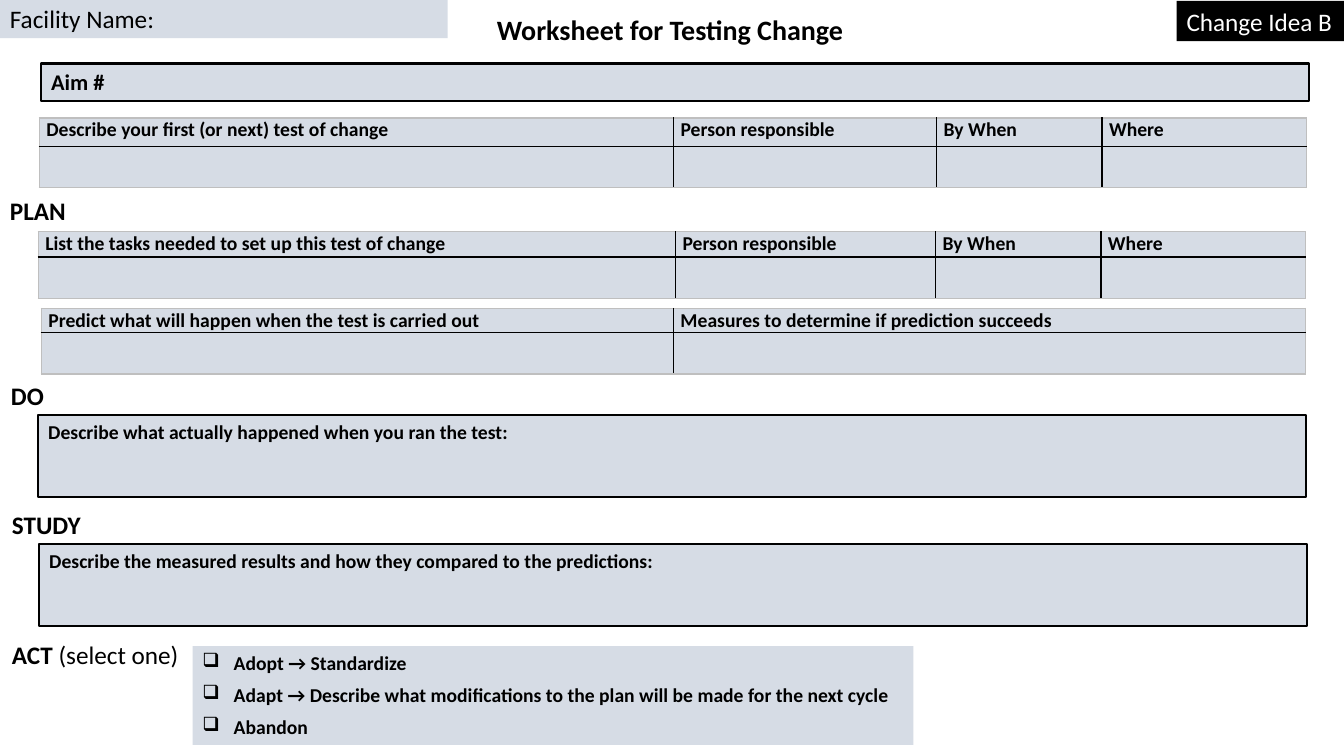
from lxml import etree
from pptx import Presentation
from pptx.dml.color import RGBColor
from pptx.enum.shapes import MSO_SHAPE
from pptx.enum.text import MSO_ANCHOR, MSO_AUTO_SIZE, PP_ALIGN
from pptx.oxml.ns import qn
from pptx.util import Inches, Pt

RECTANGLE = MSO_SHAPE.RECTANGLE
TOP = MSO_ANCHOR.TOP
LEFT = PP_ALIGN.LEFT
FIT_SHAPE = MSO_AUTO_SIZE.SHAPE_TO_FIT_TEXT


class Theme:
    font = "Calibri"
    ink, paper, panel, edge = "000000", "FFFFFF", "D6DCE5", "BFBFBF"
    title, heading, aim, body = 20, 18, 16, 14
    outline, grid = 1.5, 1


# Headings: place, size, wraps, runs of (text, bold)
HEADINGS = [
    ((4.83, 0.08, 3.67, 0.44), Theme.title, False, [("Worksheet for Testing Change", True)]),
    ((0, 1.89, 0.76, 0.4), Theme.heading, False, [("PLAN", True)]),
    ((0.01, 3.72, 0.53, 0.4), Theme.heading, False, [("DO", True)]),
    ((0.02, 5, 0.89, 0.4), Theme.heading, False, [("STUDY", True)]),
    ((0.02, 6.29, 2.08, 0.4), Theme.heading, True, [("ACT ", True), ("(select one)", False)]),
]

# Tags: place, text, fill, text colour, wraps
TAGS = [
    ((0, -0.02, 4.44, 0.4), "Facility Name:", Theme.panel, Theme.ink, True),
    ((11.67, 0.01, 1.66, 0.4), "Change Idea B", Theme.ink, Theme.paper, False),
]

# Answer boxes: place, text, size
ANSWERS = [
    ((0.41, 0.63, 12.57, 0.37), "Aim #", Theme.aim),
    ((0.38, 4.12, 12.57, 0.81),
     "Describe what actually happened when you ran the test:", Theme.body),
    ((0.39, 5.4, 12.57, 0.81),
     "Describe the measured results and how they compared to the predictions:", Theme.body),
]

# Tables: left, top, header height, columns of (heading, width)
ASSIGNMENT = [("Person responsible", 2.61), ("By When", 1.64), ("Where", 2.03)]
TABLES = [
    (0.39, 1.17, 0.28, [("Describe your first (or next) test of change", 6.29)] + ASSIGNMENT),
    (0.38, 2.3, 0.25, [("List the tasks needed to set up this test of change", 6.32),
                       ("Person responsible", 2.58)] + ASSIGNMENT[1:]),
    (0.41, 3.06, 0.24, [("Predict what will happen when the test is carried out", 6.27),
                        ("Measures to determine if prediction succeeds", 6.27)]),
]
ENTRY_HEIGHT = 0.41
CELL_INSET = 0.07

CHOICES_PLACE = (1.91, 6.41, 7.15, 0.98)
CHOICES = [
    "Adopt → Standardize",
    "Adapt → Describe what modifications to the plan will be made for the next cycle",
    "Abandon",
]
CHOICE_INDENT = 0.31


def add_span(para, text, size, color=Theme.ink, bold=True):
    span = para.add_run()
    span.text = text
    span.font.name = Theme.font
    span.font.size = Pt(size)
    span.font.bold = bold
    span.font.color.rgb = RGBColor.from_string(color)


def add_panel(page, place, fill=Theme.panel, outlined=False, wraps=True):
    panel = page.shapes.add_shape(RECTANGLE, *map(Inches, place))
    panel.shadow.inherit = False
    panel.fill.solid()
    panel.fill.fore_color.rgb = RGBColor.from_string(fill)
    if outlined:
        panel.line.color.rgb = RGBColor.from_string(Theme.ink)
        panel.line.width = Pt(Theme.outline)
    else:
        panel.line.fill.background()
    frame = panel.text_frame
    frame.word_wrap = wraps
    frame.auto_size = FIT_SHAPE
    frame.vertical_anchor = TOP
    frame.paragraphs[0].alignment = LEFT
    return frame


def set_borders(cell, colors):
    properties = cell._tc.get_or_add_tcPr()
    for index, (side, color) in enumerate(colors.items()):
        line = etree.Element(qn("a:ln" + side), w=str(Pt(Theme.grid)))
        fill = etree.SubElement(line, qn("a:solidFill"))
        etree.SubElement(fill, qn("a:srgbClr"), val=color)
        properties.insert(index, line)


def add_form_table(page, left, top, header_height, columns):
    heights = (header_height, ENTRY_HEIGHT)
    width = sum(column[1] for column in columns)
    table = page.shapes.add_table(
        len(heights), len(columns),
        *map(Inches, (left, top, width, sum(heights)))).table
    table.first_row = table.horz_banding = False
    for row, height in zip(table.rows, heights):
        row.height = Inches(height)
    last = len(columns) - 1
    for number, (heading, column_width) in enumerate(columns):
        table.columns[number].width = Inches(column_width)
        header, entry = table.cell(0, number), table.cell(1, number)
        for cell in (header, entry):
            cell.fill.solid()
            cell.fill.fore_color.rgb = RGBColor.from_string(Theme.panel)
            set_borders(cell, {
                "L": Theme.edge if number == 0 else Theme.ink,
                "R": Theme.edge if number == last else Theme.ink,
                "T": Theme.edge if cell is header else Theme.ink,
                "B": Theme.ink if cell is header else Theme.edge,
            })
        header.margin_left = header.margin_right = Inches(CELL_INSET)
        header.margin_top = header.margin_bottom = 0
        add_span(header.text_frame.paragraphs[0], heading, Theme.body)


def add_checkbox(para):
    properties = para._p.get_or_add_pPr()
    properties.set("marL", str(Inches(CHOICE_INDENT)))
    properties.set("indent", str(-Inches(CHOICE_INDENT)))
    etree.SubElement(properties, qn("a:buChar"), char="❑")


def main():
    deck = Presentation()
    deck.slide_width, deck.slide_height = Inches(13.33), Inches(7.5)
    page = deck.slides.add_slide(deck.slide_layouts[6])

    # Corner tags
    for place, text, fill, color, wraps in TAGS:
        frame = add_panel(page, place, fill, wraps=wraps)
        add_span(frame.paragraphs[0], text, Theme.heading, color, bold=False)

    # Title and stage headings
    for place, size, wraps, spans in HEADINGS:
        frame = page.shapes.add_textbox(*map(Inches, place)).text_frame
        frame.word_wrap = wraps
        frame.auto_size = FIT_SHAPE
        for text, bold in spans:
            add_span(frame.paragraphs[0], text, size, bold=bold)

    # Form tables
    for form in TABLES:
        add_form_table(page, *form)

    # Answer boxes
    for place, text, size in ANSWERS:
        frame = add_panel(page, place, outlined=True)
        add_span(frame.paragraphs[0], text, size)

    # Choices for the last stage
    frame = add_panel(page, CHOICES_PLACE)
    for number, choice in enumerate(CHOICES):
        para = frame.add_paragraph() if number else frame.paragraphs[0]
        para.alignment = LEFT
        para.space_before = para.space_after = Pt(3)
        add_checkbox(para)
        add_span(para, choice, Theme.body)

    deck.save("out.pptx")


if __name__ == "__main__":
    main()
